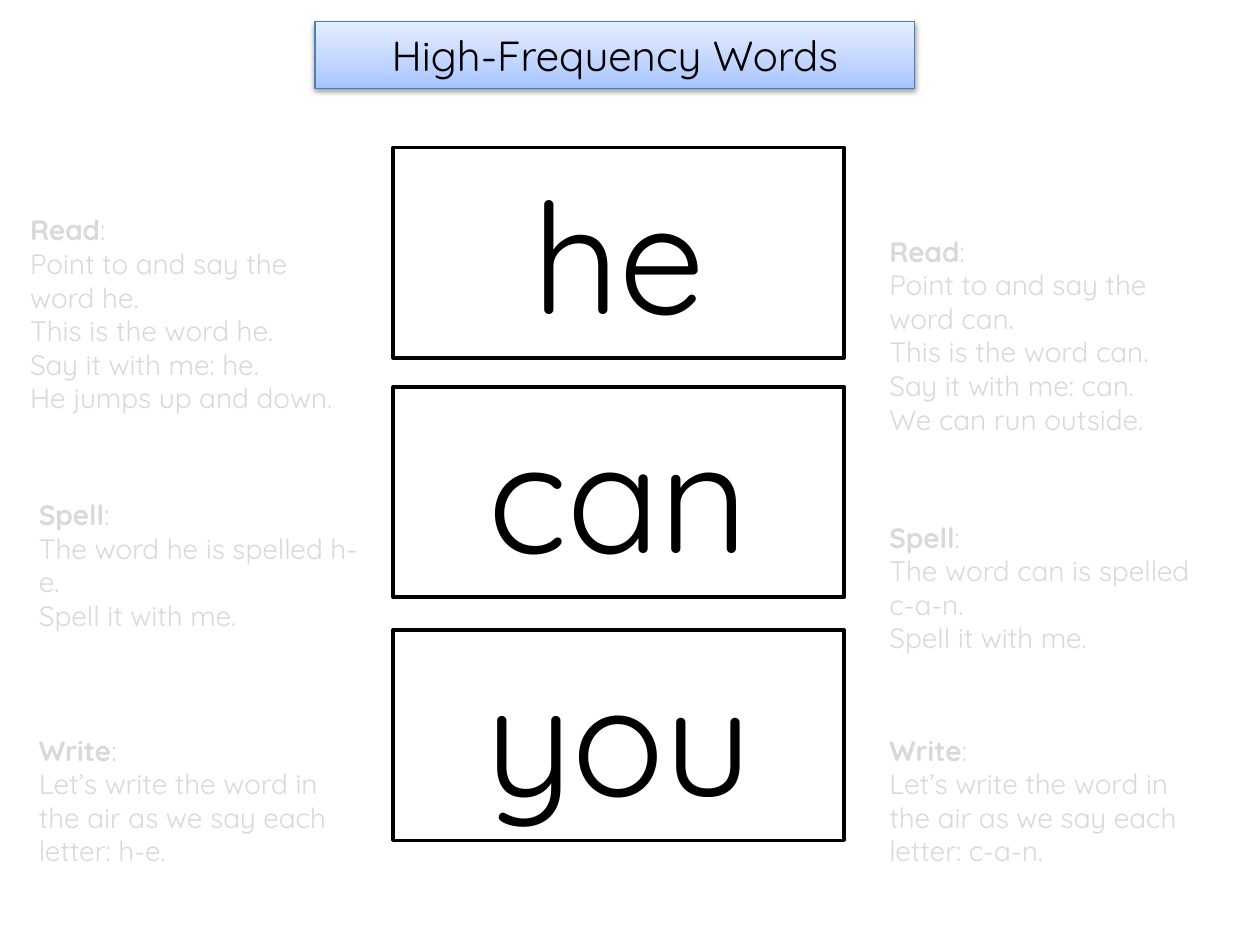
from dataclasses import dataclass
from lxml.etree import SubElement
from pptx import Presentation
from pptx.dml.color import RGBColor
from pptx.enum.shapes import MSO_SHAPE
from pptx.enum.text import MSO_ANCHOR, MSO_AUTO_SIZE, PP_ALIGN
from pptx.oxml import parse_xml
from pptx.oxml.ns import nsdecls, qn
from pptx.util import Inches, Pt


@dataclass(frozen=True)
class Theme:
    font: str = "Quicksand"
    ink: str = "000000"
    card: str = "FFFFFF"
    prompt: str = "D9D9D9"
    banner_line: str = "4B7EBC"
    banner_stops: tuple = ((0, "A4C4FF"), (35, "BFD4FF"), (100, "E6EEFF"))
    title_size: int = 24
    word_size: int = 88
    prompt_size: int = 16


class SlideBuilder:
    def __init__(self, s, theme):
        self.s = s
        self.theme = theme

    def run(self, p, text, size, color, bold=False):
        r = p.add_run()
        r.text = text
        r.font.name = self.theme.font
        r.font.size = Pt(size)
        r.font.bold = bold
        r.font.color.rgb = RGBColor.from_string(color)

    def outline(self, sp, color, width):
        sp.line.color.rgb = RGBColor.from_string(color)
        sp.line.width = Pt(width)

    def centered(self, sp, text, size):
        tf = sp.text_frame
        tf.word_wrap = True
        tf.auto_size = MSO_AUTO_SIZE.NONE
        tf.vertical_anchor = MSO_ANCHOR.MIDDLE
        p = tf.paragraphs[0]
        p.alignment = PP_ALIGN.CENTER
        self.run(p, text, size, self.theme.ink)

    def banner(self, text, x, y, w, h):
        t = self.theme
        sp = self.s.shapes.title
        sp.left, sp.top, sp.width, sp.height = map(Inches, (x, y, w, h))
        pr = sp._element.spPr
        geom = SubElement(pr, qn("a:prstGeom"), prst="roundRect")
        SubElement(geom, qn("a:avLst"))
        stops = "".join(
            f'<a:gs pos="{pos * 1000}"><a:srgbClr val="{color}"/></a:gs>'
            for pos, color in t.banner_stops
        )
        pr.append(parse_xml(
            f'<a:gradFill {nsdecls("a")} rotWithShape="1"><a:gsLst>{stops}</a:gsLst>'
            '<a:lin ang="16200000" scaled="0"/></a:gradFill>'
        ))
        self.outline(sp, t.banner_line, 0.75)
        pr.append(parse_xml(
            f'<a:effectLst {nsdecls("a")}><a:outerShdw blurRad="{Pt(3.1)}" '
            f'dist="{Pt(1.6)}" dir="5400000" rotWithShape="0">'
            '<a:srgbClr val="000000"><a:alpha val="38000"/></a:srgbClr>'
            '</a:outerShdw></a:effectLst>'
        ))
        self.centered(sp, text, t.title_size)

    def word_card(self, word, x, y, w, h):
        sp = self.s.shapes.add_shape(MSO_SHAPE.RECTANGLE, *map(Inches, (x, y, w, h)))
        sp.shadow.inherit = False
        sp.fill.solid()
        sp.fill.fore_color.rgb = RGBColor.from_string(self.theme.card)
        self.outline(sp, self.theme.ink, 2)
        self.centered(sp, word, self.theme.word_size)

    def prompt(self, heading, lines, x, y, w, h):
        t = self.theme
        tf = self.s.shapes.add_textbox(*map(Inches, (x, y, w, h))).text_frame
        tf.word_wrap = True
        tf.auto_size = MSO_AUTO_SIZE.SHAPE_TO_FIT_TEXT
        p = tf.paragraphs[0]
        self.run(p, heading, t.prompt_size, t.prompt, bold=True)
        self.run(p, ":", t.prompt_size, t.prompt)
        for line in lines:
            self.run(tf.add_paragraph(), line, t.prompt_size, t.prompt)


def routine(word, sentence):
    spelling = "-".join(word)
    return (
        ("Read", 1.72, (
            f"Point to and say the word {word}.",
            f"This is the word {word}.",
            f"Say it with me: {word}.",
            sentence,
        )),
        ("Spell", 1.18, (
            f"The word {word} is spelled {spelling}.",
            "Spell it with me.",
        )),
        ("Write", 1.18, (
            f"Let’s write the word in the air as we say each letter: {spelling}.",
        )),
    )


def main():
    prs = Presentation()
    prs.slide_width, prs.slide_height = Inches(10), Inches(7.5)
    s = prs.slides.add_slide(prs.slide_layouts[5])
    slide = SlideBuilder(s, Theme())

    slide.banner("High-Frequency Words", 2.5, 0.17, 4.76, 0.53)
    for word, y in (("he", 1.17), ("can", 3.07), ("you", 5)):
        slide.word_card(word, 3.12, y, 3.58, 1.67)

    columns = (
        ("he", "He jumps up and down.", ((0.14, 1.64), (0.21, 3.9), (0.21, 5.77))),
        ("can", "We can run outside.", ((6.96, 1.81), (6.96, 4.08), (6.96, 5.77))),
    )
    for word, sentence, places in columns:
        for (heading, h, lines), (x, y) in zip(routine(word, sentence), places):
            slide.prompt(heading, lines, x, y, 2.78, h)

    prs.save("out.pptx")


if __name__ == "__main__":
    main()
